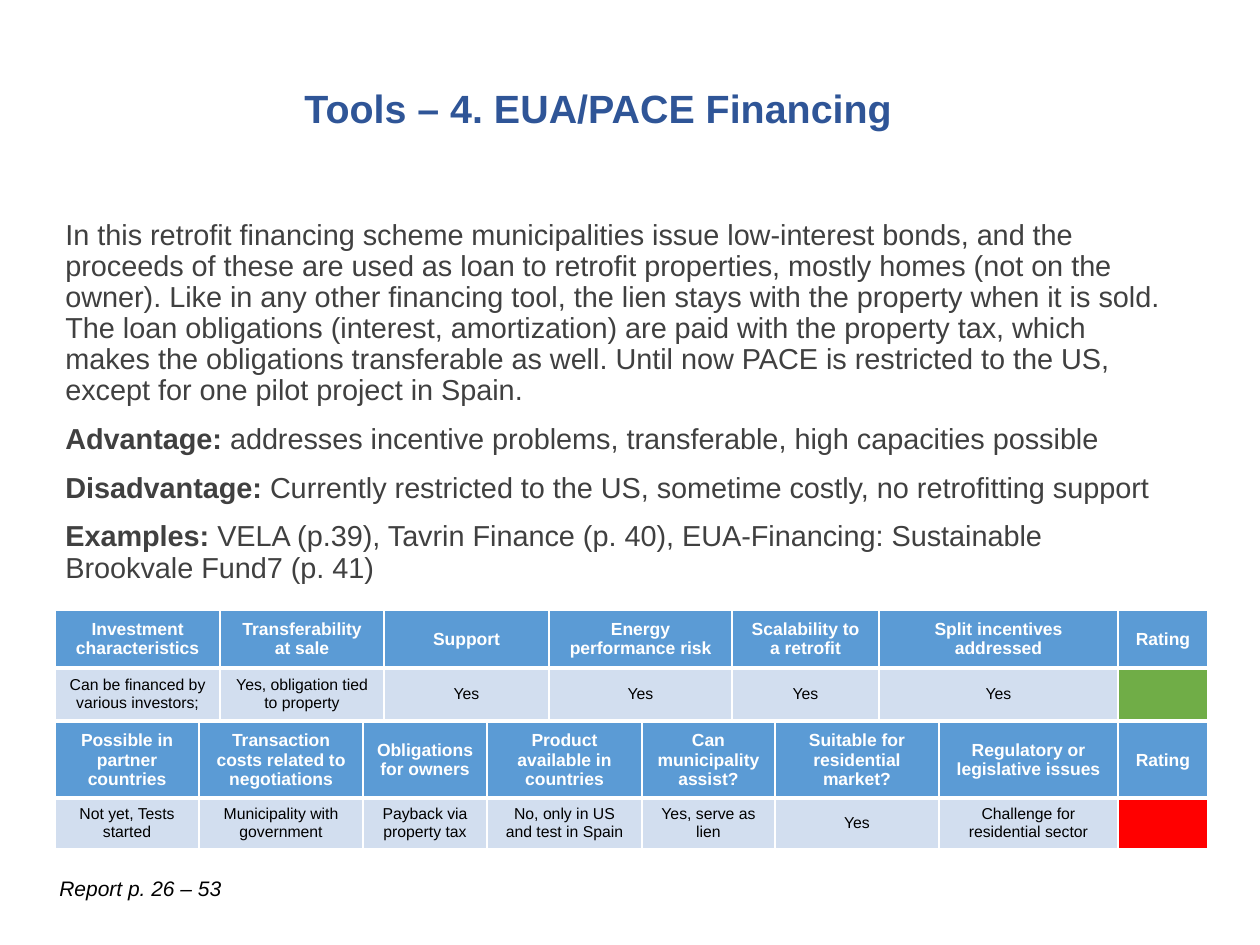
from dataclasses import dataclass
from typing import NamedTuple

from lxml import etree
from pptx import Presentation
from pptx import util as u
from pptx.dml import color
from pptx.enum import text
from pptx.oxml import ns

PX = 914400 / 126


def px(length: int) -> u.Emu:
    return u.Emu(round(length * PX))


@dataclass(frozen=True)
class Theme:
    font: str = "Arial"
    title: str = "2F5597"
    body: str = "404040"
    ink: str = "000000"
    white: str = "FFFFFF"
    header_fill: str = "5B9BD5"
    answer_fill: str = "D2DEEF"
    good: str = "70AD47"
    bad: str = "FF0000"
    title_size: float = 22.5
    body_size: float = 16.5
    source_size: float = 12
    header_size: float = 10
    answer_size: float = 9


THEME = Theme()


class Style(NamedTuple):
    size: float
    color: str
    bold: bool = False
    italic: bool = False


class Box(NamedTuple):
    left: int
    top: int
    width: int
    height: int


class Criterion(NamedTuple):
    name: str
    answer: str
    width: int


@dataclass(frozen=True)
class Scorecard:
    top: int
    header_height: int
    answer_height: int
    criteria: list[Criterion]
    rating: str


TITLE = Style(THEME.title_size, THEME.title, bold=True)
BODY = Style(THEME.body_size, THEME.body)
LABEL = BODY._replace(bold=True)
SOURCE = Style(THEME.source_size, THEME.ink, italic=True)
HEADER = Style(THEME.header_size, THEME.white, bold=True)
ANSWER = Style(THEME.answer_size, THEME.ink)

TABLE_LEFT = 55
RATING_WIDTH = 90

INTRO = (
    "In this retrofit financing scheme municipalities issue low-interest bonds, and the "
    "proceeds of these are used as loan to retrofit properties, mostly homes (not on the "
    "owner). Like in any other financing tool, the lien stays with the property when it is "
    "sold. The loan obligations (interest, amortization) are paid with the property tax, "
    "which makes the obligations transferable as well. Until now PACE is restricted to the "
    "US, except for one pilot project in Spain."
)
POINTS = [
    ("Advantage:", " addresses incentive problems, transferable, high capacities possible"),
    ("Disadvantage:", " Currently restricted to the US, sometime costly, no retrofitting support"),
    ("Examples: ", "VELA (p.39), Tavrin Finance (p. 40), EUA-Financing: "
                   "Sustainable Brookvale Fund7 (p. 41)"),
]

SCORECARDS = [
    Scorecard(610, 58, 52, [
        Criterion("Investment characteristics", "Can be financed by various investors;", 165),
        Criterion("Transferability at sale", "Yes, obligation tied to property", 164),
        Criterion("Support", "Yes", 165),
        Criterion("Energy performance risk", "Yes", 183),
        Criterion("Scalability to a retrofit", "Yes", 147),
        Criterion("Split incentives addressed", "Yes", 239),
    ], THEME.good),
    Scorecard(722, 76, 50, [
        Criterion("Possible in partner countries", "Not yet, Tests started", 144),
        Criterion("Transaction costs related to negotiations", "Municipality with government", 164),
        Criterion("Obligations for owners", "Payback via property tax", 124),
        Criterion("Product available in countries", "No, only in US and test in Spain", 155),
        Criterion("Can municipality assist?", "Yes, serve as lien", 133),
        Criterion("Suitable for residential market?", "Yes", 164),
        Criterion("Regulatory or legislative issues", "Challenge for residential sector", 179),
    ], THEME.bad),
]


def add_run(paragraph, words: str, style: Style) -> None:
    run = paragraph.add_run()
    run.text = words
    font = run.font
    font.name = THEME.font
    font.size = u.Pt(style.size)
    font.bold = style.bold
    font.italic = style.italic
    font.color.rgb = color.RGBColor.from_string(style.color)


def add_text(slide, box: Box, paragraphs: list[list[tuple[str, Style]]],
             line_spacing: float = 1.0, anchor=text.MSO_ANCHOR.TOP) -> None:
    frame = slide.shapes.add_textbox(*map(px, box)).text_frame
    frame.word_wrap = True
    frame.vertical_anchor = anchor
    for index, runs in enumerate(paragraphs):
        paragraph = frame.add_paragraph() if index else frame.paragraphs[0]
        paragraph.line_spacing = line_spacing
        if index:
            paragraph.space_before = u.Pt(10)
        for words, style in runs:
            add_run(paragraph, words, style)


def set_borders(cell, bottom: int) -> None:
    properties = cell._tc.get_or_add_tcPr()
    for side, points in (("L", 1), ("R", 1), ("T", 1), ("B", bottom)):
        line = etree.SubElement(properties, ns.qn(f"a:ln{side}"), w=str(u.Pt(points)))
        fill = etree.SubElement(line, ns.qn("a:solidFill"))
        etree.SubElement(fill, ns.qn("a:srgbClr"), val=THEME.white)


def fill_cell(cell, words: str, style: Style, fill: str, bottom: int) -> None:
    set_borders(cell, bottom)
    cell.fill.solid()
    cell.fill.fore_color.rgb = color.RGBColor.from_string(fill)
    cell.vertical_anchor = text.MSO_ANCHOR.MIDDLE
    paragraph = cell.text_frame.paragraphs[0]
    paragraph.alignment = text.PP_ALIGN.CENTER
    if words:
        add_run(paragraph, words, style)


def add_scorecard(slide, card: Scorecard) -> None:
    columns = [*card.criteria, Criterion("Rating", "", RATING_WIDTH)]
    box = Box(TABLE_LEFT, card.top, sum(column.width for column in columns),
              card.header_height + card.answer_height)
    table = slide.shapes.add_table(2, len(columns), *map(px, box)).table
    table.horz_banding = False
    table.rows[0].height = px(card.header_height)
    table.rows[1].height = px(card.answer_height)
    for index, column in enumerate(columns):
        table.columns[index].width = px(column.width)
        answer_fill = THEME.answer_fill if column.answer else card.rating
        fill_cell(table.cell(0, index), column.name, HEADER, THEME.header_fill, bottom=3)
        fill_cell(table.cell(1, index), column.answer, ANSWER, answer_fill, bottom=1)


def main() -> None:
    deck = Presentation()
    deck.slide_width, deck.slide_height = px(1260), px(945)
    slide = deck.slides.add_slide(deck.slide_layouts[6])

    # Description and pros and cons
    points = [[(label, LABEL), (detail, BODY)] for label, detail in POINTS]
    add_text(slide, Box(53, 214, 1126, 542), [[(INTRO, BODY)], *points], line_spacing=0.9)

    # Title and source
    add_text(slide, Box(292, 75, 791, 71), [[("Tools – 4. EUA/PACE Financing", TITLE)]],
             line_spacing=0.9, anchor=text.MSO_ANCHOR.MIDDLE)
    add_text(slide, Box(47, 869, 292, 38), [[("Report p. 26 – 53", SOURCE)]])

    # Ratings
    for card in SCORECARDS:
        add_scorecard(slide, card)

    deck.save("out.pptx")


if __name__ == "__main__":
    main()
